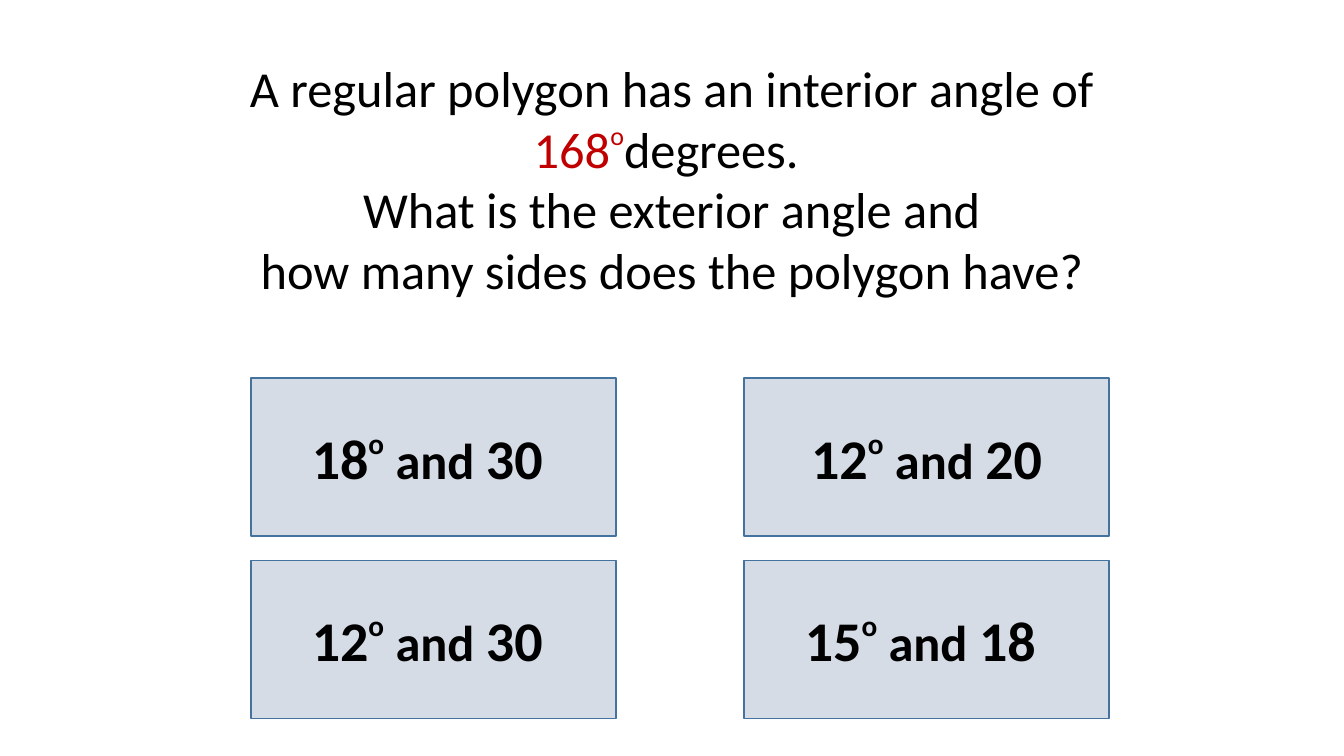
from pptx import Presentation
from pptx.dml.color import RGBColor
from pptx.enum.shapes import MSO_SHAPE
from pptx.enum.text import MSO_ANCHOR, MSO_AUTO_SIZE, PP_ALIGN
from pptx.util import Inches, Pt

RECTANGLE = MSO_SHAPE.RECTANGLE
MIDDLE = MSO_ANCHOR.MIDDLE
CENTER = PP_ALIGN.CENTER
GROW = MSO_AUTO_SIZE.SHAPE_TO_FIT_TEXT

BLACK = RGBColor(0x00, 0x00, 0x00)
RED = RGBColor(0xC0, 0x00, 0x00)
PALE_BLUE = RGBColor(0xD6, 0xDC, 0xE5)
BORDER_BLUE = RGBColor(0x43, 0x73, 0x9E)
FONT = "Calibri"

# Areas in inches: left, top, width, height
QUESTION_AREA = (2.1, 0.52, 9.13, 2.52)
ANSWER_AREA = (2.49, 3.75, 8.51, 3.38)
ANSWER_WIDTH, ANSWER_HEIGHT = 3.62, 1.57

# Each answer: exterior angle, number of sides
ANSWERS = [
    [("18", "30 "), ("12", "20")],
    [("12", "30 "), ("15", "18 ")],
]


def add_run(paragraph, text, size=36, color=BLACK, bold=False, raised=False):
    run = paragraph.add_run()
    run.text = text
    font = run.font
    font.name, font.size, font.bold = FONT, Pt(size), bold
    font.color.rgb = color
    if raised:
        run._r.get_or_add_rPr().set("baseline", "50000")


def add_question(slide, area):
    box = slide.shapes.add_textbox(*map(Inches, area))
    text_frame = box.text_frame
    text_frame.word_wrap = True
    text_frame.auto_size = GROW

    # Given angle
    paragraph = text_frame.paragraphs[0]
    paragraph.alignment = CENTER
    add_run(paragraph, "A regular polygon has an interior angle of ")
    add_run(paragraph, "168", color=RED)
    add_run(paragraph, "o", size=32, color=RED, raised=True)
    add_run(paragraph, "degrees. ")

    # What to find
    for line in ("What is the exterior angle and",
                 "how many sides does the polygon have?"):
        paragraph = text_frame.add_paragraph()
        paragraph.alignment = CENTER
        add_run(paragraph, line)


def add_answer(slide, left, top, angle, sides):
    shape = slide.shapes.add_shape(
        RECTANGLE, *map(Inches, (left, top, ANSWER_WIDTH, ANSWER_HEIGHT)))
    shape.shadow.inherit = False
    shape.fill.solid()
    shape.fill.fore_color.rgb = PALE_BLUE
    shape.line.color.rgb = BORDER_BLUE
    shape.line.width = Pt(1)

    text_frame = shape.text_frame
    text_frame.word_wrap = True
    text_frame.vertical_anchor = MIDDLE
    paragraph = text_frame.paragraphs[0]
    paragraph.alignment = CENTER
    add_run(paragraph, angle, size=40, bold=True)
    add_run(paragraph, "o", bold=True, raised=True)
    add_run(paragraph, " and ", bold=True)
    add_run(paragraph, sides, size=40, bold=True)


def add_answer_grid(slide, area, answers):
    left, top, width, height = area
    column_step = (width - ANSWER_WIDTH) / (len(answers[0]) - 1)
    row_step = (height - ANSWER_HEIGHT) / (len(answers) - 1)
    for row, row_answers in enumerate(answers):
        for column, (angle, sides) in enumerate(row_answers):
            add_answer(slide, left + column * column_step,
                       top + row * row_step, angle, sides)


def main():
    presentation = Presentation()
    presentation.slide_width = Inches(13.33)
    presentation.slide_height = Inches(7.5)
    slide = presentation.slides.add_slide(presentation.slide_layouts[6])
    add_question(slide, QUESTION_AREA)
    add_answer_grid(slide, ANSWER_AREA, ANSWERS)
    presentation.save("out.pptx")


if __name__ == "__main__":
    main()
